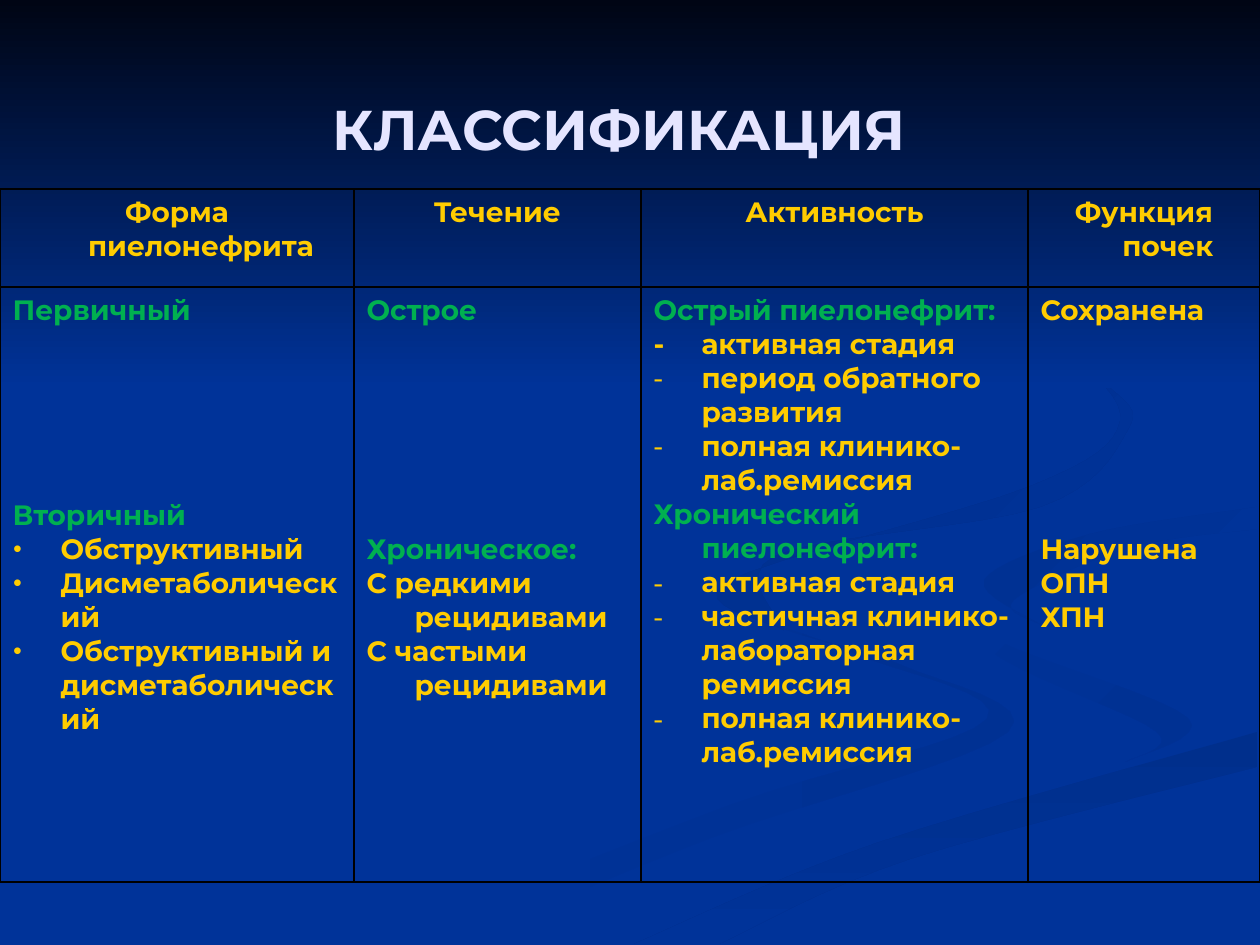
from dataclasses import dataclass

from lxml import etree
from pptx import Presentation
from pptx.dml.color import RGBColor
from pptx.enum.shapes import MSO_SHAPE
from pptx.enum.text import MSO_ANCHOR, MSO_AUTO_SIZE, PP_ALIGN
from pptx.oxml.ns import qn
from pptx.util import Emu, Pt

RECTANGLE = MSO_SHAPE.RECTANGLE
MIDDLE = MSO_ANCHOR.MIDDLE
NO_FIT = MSO_AUTO_SIZE.NONE
CENTER, LEFT = PP_ALIGN.CENTER, PP_ALIGN.LEFT
EMU_PER_PX = 914400 / 126
CURVE_STEPS = 8


@dataclass(frozen=True)
class Theme:
    """Colours, fonts and type sizes of the slide."""
    base: str = "003399"
    night: str = "000514"
    ribbon: str = "003193"
    ribbon_dark: str = "002F8C"
    title: str = "E5E5FF"
    accent: str = "00B050"
    body: str = "FFCC00"
    border: str = "000000"
    font: str = "Montserrat"
    bullet_font: str = "Times New Roman"
    title_pt: int = 32
    body_pt: int = 16
    line_pt: float = 19.5


@dataclass(frozen=True)
class Line:
    """One paragraph of a cell, with the number of free lines above it."""
    text: str
    color: str = Theme.body
    marker: str = ""
    gap: int = 0


THEME = Theme()
GREEN = THEME.accent
HEADERS = ["Форма пиелонефрита", "Течение", "Активность", "Функция почек"]
BODY = [
    [Line("Первичный", GREEN),
     Line("Вторичный", GREEN, gap=5),
     Line("Обструктивный", marker="•"),
     Line("Дисметаболический", marker="•"),
     Line("Обструктивный и дисметаболический", marker="•")],
    [Line("Острое", GREEN),
     Line("Хроническое:", GREEN, gap=6),
     Line("С редкими рецидивами"),
     Line("С частыми рецидивами")],
    [Line("Острый пиелонефрит:", GREEN),
     Line("-\tактивная стадия"),
     Line("период обратного развития", marker="-"),
     Line("полная клинико-лаб.ремиссия", marker="-"),
     Line("Хронический пиелонефрит:", GREEN),
     Line("активная стадия", marker="-"),
     Line("частичная клинико-лабораторная ремиссия", marker="-"),
     Line("полная клинико-лаб.ремиссия", marker="-")],
    [Line("Сохранена"), Line("Нарушена", gap=6), Line("ОПН"), Line("ХПН")],
]
RIBBONS = [
    (THEME.base, THEME.ribbon, 0,
     [(346, 284), (348, 311), (478, 360), (609, 425), (352, 511), (0, 650)],
     [(346, 284), (396, 331), (523, 371), (630, 438), (333, 544), (77, 650)]),
    (THEME.base, THEME.ribbon, 45,
     [(534, 291), (626, 366), (779, 438), (748, 468)],
     [(534, 291), (620, 347), (810, 424), (748, 468)]),
    (THEME.ribbon_dark, THEME.base, 90,
     [(256, 650), (499, 549), (879, 438)],
     [(341, 650), (532, 565), (879, 473)]),
    (THEME.ribbon, THEME.base, 45,
     [(663, 331), (606, 286), (712, 240), (879, 213)],
     [(663, 331), (636, 306), (751, 254), (879, 235)]),
    (THEME.ribbon_dark, THEME.base, 45,
     [(582, 0), (731, 93), (748, 139), (662, 213), (397, 262), (406, 336)],
     [(582, 0), (688, 58), (742, 128), (653, 192), (349, 288), (406, 336)]),
]


def px(n):
    """Turn pixels into EMU."""
    return Emu(round(n * EMU_PER_PX))


def paint(sp, start, end, angle):
    """Fill a shape with a two-colour gradient turned clockwise by angle."""
    sp.shadow.inherit = False
    sp.line.fill.background()
    sp.fill.gradient()
    sp.fill.gradient_angle = -angle % 360
    for stop, color in zip(sp.fill.gradient_stops, (start, end)):
        stop.color.rgb = RGBColor.from_string(color)


def style(p, size, color):
    """Format every run of a paragraph."""
    for r in p.runs:
        r.font.name, r.font.size, r.font.bold = THEME.font, Pt(size), True
        r.font.color.rgb = RGBColor.from_string(color)


def spline(a, b, c, d, t):
    """Return the Catmull-Rom value between b and c."""
    return b + t * (c - a + t * (2 * a - 5 * b + 4 * c - d
                                 + t * (3 * (b - c) + d - a))) / 2


def smooth(points):
    """Run a smooth curve through the points of one edge."""
    ends = [points[0], *points, points[-1]]
    curve = [tuple(spline(*axis, i / CURVE_STEPS) for axis in zip(*quad))
             for quad in zip(ends, ends[1:], ends[2:], ends[3:])
             for i in range(CURVE_STEPS)]
    return curve + [points[-1]]


def add_ribbons(s, x, y):
    """Draw the faint ribbons from the corner of their region."""
    for start, end, angle, near, far in RIBBONS:
        outline = smooth(near) + smooth(far)[::-1]
        corners = [(px(x + dx), px(y + dy)) for dx, dy in outline]
        builder = s.shapes.build_freeform(*corners[0])
        builder.add_line_segments(corners[1:], close=True)
        paint(builder.convert_to_shape(), start, end, angle)


def add_night_sky(s, x, y, w, h):
    """Shade the top of the slide from dark to the base colour."""
    sp = s.shapes.add_shape(RECTANGLE, px(x), px(y), px(w), px(h))
    paint(sp, THEME.night, THEME.base, 90)


def add_title(s, x, y, w, h):
    """Place the title placeholder in front of the backdrop."""
    sp = s.shapes.title
    s.shapes._spTree.append(sp._element)
    sp.left, sp.top, sp.width, sp.height = px(x), px(y), px(w), px(h)
    tf = sp.text_frame
    tf.text = "КЛАССИФИКАЦИЯ"
    tf.auto_size, tf.vertical_anchor = NO_FIT, MIDDLE
    tf.margin_top, tf.margin_right = px(28), px(34)
    tf.paragraphs[0].alignment = CENTER
    style(tf.paragraphs[0], THEME.title_pt, THEME.title)


def add_borders(cell):
    """Give a cell a thin line on all four sides."""
    tc_pr = cell._tc.get_or_add_tcPr()
    for i, side in enumerate(("a:lnL", "a:lnR", "a:lnT", "a:lnB")):
        ln = etree.Element(qn(side), w=str(Pt(1)))
        fill = etree.SubElement(ln, qn("a:solidFill"))
        etree.SubElement(fill, qn("a:srgbClr"), val=THEME.border)
        tc_pr.insert(i, ln)


def fill_cell(cell, lines, align):
    """Write hanging paragraphs into a transparent, bordered cell."""
    cell.fill.background()
    add_borders(cell)
    tf = cell.text_frame
    tf.text = "\n".join(line.text for line in lines)
    for p, line in zip(tf.paragraphs, lines):
        p.alignment = align
        p.space_before = Pt(line.gap * THEME.line_pt)
        style(p, THEME.body_pt, line.color)
        p_pr = p._p.get_or_add_pPr()
        p_pr.set("marL", str(px(48)))
        p_pr.set("indent", str(-px(48)))
        if line.marker:
            etree.SubElement(p_pr, qn("a:buFont"), typeface=THEME.bullet_font)
            etree.SubElement(p_pr, qn("a:buChar"), char=line.marker)


def add_classification(s, x, y, widths, heights):
    """Build the table of forms, course, activity and function."""
    frame = s.shapes.add_table(len(heights), len(widths), px(x), px(y),
                               px(sum(widths)), px(sum(heights)))
    table = frame.table
    table.first_row = table.horz_banding = False
    for row, h in zip(table.rows, heights):
        row.height = px(h)
    for i, w in enumerate(widths):
        table.columns[i].width = px(w)
        fill_cell(table.cell(0, i), [Line(HEADERS[i])], CENTER)
        fill_cell(table.cell(1, i), BODY[i], LEFT)


def main():
    """Build and save the slide."""
    prs = Presentation()
    prs.slide_width, prs.slide_height = px(1260), px(945)
    s = prs.slides.add_slide(prs.slide_layouts[5])
    s.background.fill.solid()
    s.background.fill.fore_color.rgb = RGBColor.from_string(THEME.base)
    add_ribbons(s, 378, 294)
    add_night_sky(s, 0, 0, 1260, 388)
    add_title(s, 63, 38, 1134, 158)
    add_classification(s, 0, 189, [354, 287, 387, 232], [98, 595])
    prs.save("out.pptx")


if __name__ == "__main__":
    main()
